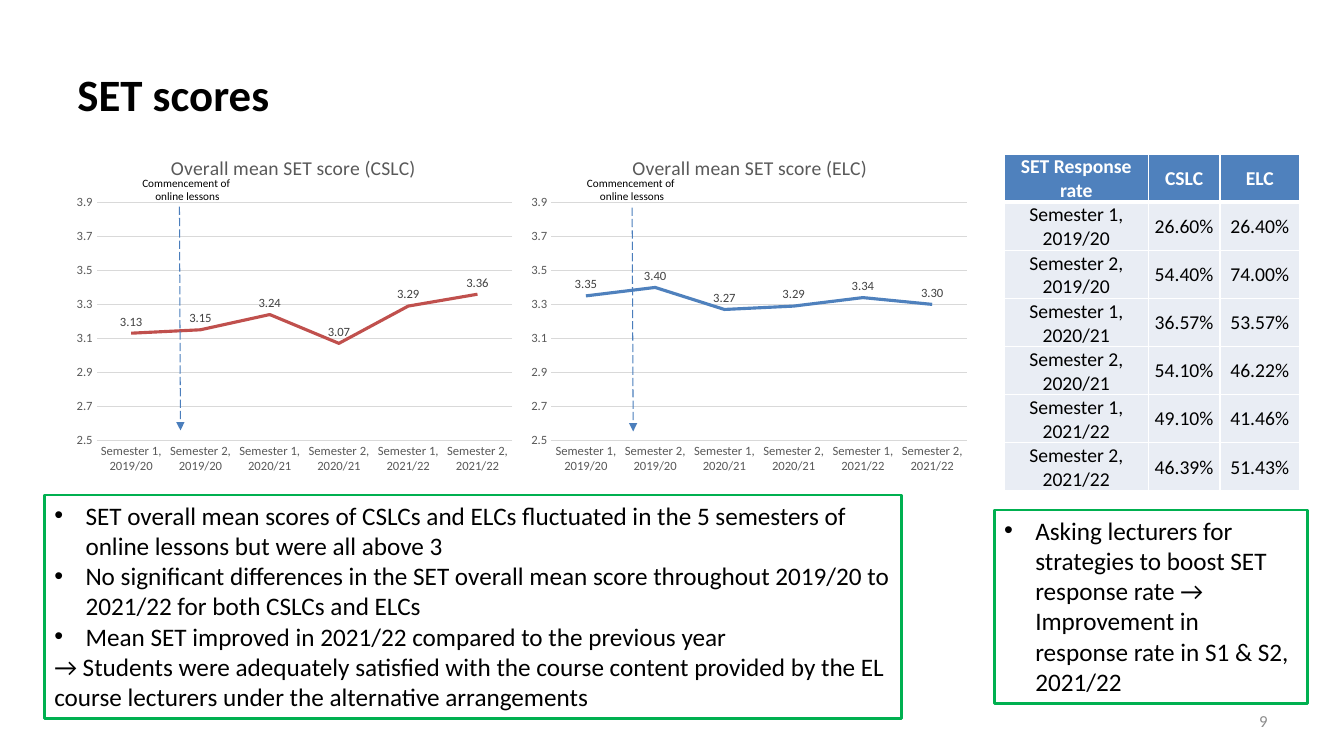
from lxml import etree
from pptx import Presentation
from pptx.chart.data import CategoryChartData
from pptx.dml.color import RGBColor
from pptx.enum.chart import XL_CHART_TYPE, XL_LABEL_POSITION, XL_MARKER_STYLE, XL_TICK_MARK
from pptx.enum.dml import MSO_LINE
from pptx.enum.shapes import MSO_CONNECTOR, MSO_SHAPE
from pptx.enum.text import MSO_ANCHOR, PP_ALIGN
from pptx.oxml import parse_xml
from pptx.oxml.ns import nsdecls, qn
from pptx.util import Inches, Pt

FONT = "Calibri"
BLUE, RED, GREEN, GREY = "4F81BD", "C0504D", "00B050", "595959"
SEMESTERS = [f"Semester {term}, {year}"
             for year in ("2019/20", "2020/21", "2021/22") for term in (1, 2)]
CSLC_SCORES = [3.13, 3.15, 3.24, 3.07, 3.29, 3.36]
ELC_SCORES = [3.35, 3.40, 3.27, 3.29, 3.34, 3.30]
CSLC_RATES = ["26.60%", "54.40%", "36.57%", "54.10%", "49.10%", "46.39%"]
ELC_RATES = ["26.40%", "74.00%", "53.57%", "46.22%", "41.46%", "51.43%"]
FINDINGS = [
    "SET overall mean scores of CSLCs and ELCs fluctuated in the 5 semesters of online lessons but were all above 3",
    "No significant differences in the SET overall mean score throughout 2019/20 to 2021/22 for both CSLCs and ELCs",
    "Mean SET improved in 2021/22 compared to the previous year",
    "→ Students were adequately satisfied with the course content provided by the EL course lecturers under the alternative arrangements",
]
FOLLOW_UP = ["Asking lecturers for strategies to boost SET response rate → "
             "Improvement in response rate in S1 & S2, 2021/22"]


def color(value):
    return RGBColor.from_string(value)


def set_font(font, size, value, bold=False):
    font.name, font.size, font.bold = FONT, Pt(size), bold
    font.color.rgb = color(value)


def add_text(slide, box, text, size, value="000000", align=PP_ALIGN.LEFT,
             anchor=MSO_ANCHOR.MIDDLE, bold=False, wrap=True):
    frame = slide.shapes.add_textbox(*map(Inches, box)).text_frame
    frame.word_wrap = wrap
    frame.vertical_anchor = anchor
    frame.text = text
    for paragraph in frame.paragraphs:
        paragraph.alignment = align
        set_font(paragraph.font, size, value, bold)


def add_manual_layout(parent, index, inner=False, **fractions):
    """Place a chart part by fractions of the chart's size."""
    target = '<c:layoutTarget val="inner"/>' if inner else ""
    modes = '<c:xMode val="edge"/><c:yMode val="edge"/>'
    sizes = "".join(f'<c:{key} val="{value}"/>' for key, value in fractions.items())
    for old in parent.findall(qn("c:layout")):
        parent.remove(old)
    parent.insert(index, parse_xml(
        f'<c:layout {nsdecls("c")}><c:manualLayout>{target}{modes}{sizes}'
        '</c:manualLayout></c:layout>'))


def add_score_chart(slide, left, course, scores, line_color, title_x):
    data = CategoryChartData(number_format="0.00")
    data.categories = SEMESTERS
    data.add_series("Series 1", scores)
    chart = slide.shapes.add_chart(XL_CHART_TYPE.LINE, Inches(left), Inches(1.39),
                                   Inches(4.5), Inches(3.39), data).chart
    chart.has_legend = False
    set_font(chart.font, 10, "000000")

    # Title
    title = chart.chart_title
    title.text_frame.text = f"Overall mean SET score ({course})"
    set_font(title.text_frame.paragraphs[0].runs[0].font, 14, GREY)
    title.include_in_layout = False
    add_manual_layout(title._element, 1, x=title_x, y=0.03)
    add_manual_layout(chart.plots[0]._element.getparent(), 0, inner=True,
                      x=0.064, y=0.183, w=0.916, h=0.695)

    # Axes
    for axis in (chart.category_axis, chart.value_axis):
        axis.major_tick_mark = axis.minor_tick_mark = XL_TICK_MARK.NONE
        set_font(axis.tick_labels.font, 9, GREY)
    values = chart.value_axis
    values.minimum_scale, values.maximum_scale, values.major_unit = 2.5, 3.9, 0.2
    values.tick_labels.number_format = "0.0"
    values.tick_labels.number_format_is_linked = False
    values.format.line.fill.background()
    for line in (chart.category_axis.format.line, values.major_gridlines.format.line):
        line.color.rgb = color("D9D9D9")
        line.width = Pt(0.75)

    # Series and labels
    plot = chart.plots[0]
    plot.vary_by_categories = False
    series = plot.series[0]
    series.smooth = False
    series.marker.style = XL_MARKER_STYLE.NONE
    series.format.line.color.rgb = color(line_color)
    series.format.line.width = Pt(2.25)
    labels = series.data_labels
    labels.show_value = True
    labels.position = XL_LABEL_POSITION.ABOVE
    labels.number_format = "0.00"
    labels.number_format_is_linked = False
    set_font(labels.font, 9, "404040")


def add_online_marker(slide, arrow_left, arrow_top, label_left):
    arrow = slide.shapes.add_connector(
        MSO_CONNECTOR.STRAIGHT, Inches(arrow_left), Inches(arrow_top),
        Inches(arrow_left + 0.01), Inches(arrow_top + 2.22))
    arrow.line.color.rgb = color("4B7EBC")
    arrow.line.width = Pt(0.75)
    arrow.line.dash_style = MSO_LINE.LONG_DASH
    etree.SubElement(arrow.line._get_or_add_ln(), qn("a:tailEnd"), type="triangle")
    etree.SubElement(arrow._element.spPr, qn("a:effectLst"))
    add_text(slide, (label_left, 1.7, 1.1, 0.37), "Commencement of \nonline lessons", 8,
             align=PP_ALIGN.CENTER, anchor=MSO_ANCHOR.TOP, wrap=False)


def set_borders(cell, bottom_width):
    widths = {"lnL": 1, "lnR": 1, "lnT": 1, "lnB": bottom_width}
    for index, (side, width) in enumerate(widths.items()):
        cell._tc.get_or_add_tcPr().insert(index, parse_xml(
            f'<a:{side} {nsdecls("a")} w="{Pt(width)}"><a:solidFill>'
            f'<a:srgbClr val="FFFFFF"/></a:solidFill></a:{side}>'))


def add_rate_table(slide):
    rows = [("SET Response rate", "CSLC", "ELC"), *zip(SEMESTERS, CSLC_RATES, ELC_RATES)]
    table = slide.shapes.add_table(len(rows), 3, Inches(9.96), Inches(1.53),
                                   Inches(2.93), Inches(3.34)).table
    for column, width in zip(table.columns, (1.43, 0.71, 0.79)):
        column.width = Inches(width)
    for row_index, texts in enumerate(rows):
        header = row_index == 0
        for column_index, text in enumerate(texts):
            cell = table.cell(row_index, column_index)
            cell.text = text
            cell.vertical_anchor = MSO_ANCHOR.MIDDLE
            cell.margin_left = cell.margin_right = cell.margin_top = Inches(0.01)
            cell.margin_bottom = 0
            cell.fill.solid()
            cell.fill.fore_color.rgb = color(BLUE if header else "E9EDF4")
            set_borders(cell, 3 if header else 1)
            paragraph = cell.text_frame.paragraphs[0]
            paragraph.alignment = PP_ALIGN.CENTER
            set_font(paragraph.runs[0].font, 14, "FFFFFF" if header else "000000", header)


def add_note_box(slide, box, texts):
    shape = slide.shapes.add_shape(MSO_SHAPE.RECTANGLE, *map(Inches, box))
    shape.shadow.inherit = False
    shape.fill.solid()
    shape.fill.fore_color.rgb = color("FFFFFF")
    shape.line.color.rgb = color(GREEN)
    shape.line.width = Pt(2)
    frame = shape.text_frame
    frame.word_wrap = True
    frame.vertical_anchor = MSO_ANCHOR.TOP
    frame.text = "\n".join(texts)
    for paragraph in frame.paragraphs:
        paragraph.alignment = PP_ALIGN.LEFT
        if not paragraph.text.startswith("→"):
            properties = paragraph._p.get_or_add_pPr()
            properties.set("marL", str(Inches(0.31)))
            properties.set("indent", str(-Inches(0.31)))
            etree.SubElement(properties, qn("a:buFont"), typeface="Arial")
            etree.SubElement(properties, qn("a:buChar"), char="•")
        set_font(paragraph.font, 18, "000000")


def main():
    presentation = Presentation()
    presentation.slide_width, presentation.slide_height = Inches(13.33), Inches(7.5)
    slide = presentation.slides.add_slide(presentation.slide_layouts[6])

    # Heading and page number
    add_text(slide, (0.67, 0.3, 12, 1.25), "SET scores", 32, bold=True)
    add_text(slide, (9.56, 6.95, 3.11, 0.4), "9", 12, "8C8C8C", PP_ALIGN.RIGHT)

    # Score charts with the start of online lessons
    add_score_chart(slide, 0.67, "CSLC", CSLC_SCORES, RED, 0.22)
    add_score_chart(slide, 5.18, "ELC", ELC_SCORES, BLUE, 0.235)
    add_online_marker(slide, 1.78, 2.05, 1.31)
    add_online_marker(slide, 6.27, 2.06, 5.72)

    # Response rates and findings
    add_rate_table(slide)
    add_note_box(slide, (0.44, 4.91, 8.5, 2.22), FINDINGS)
    add_note_box(slide, (9.86, 5.06, 3.11, 1.92), FOLLOW_UP)

    presentation.save("out.pptx")


if __name__ == "__main__":
    main()
